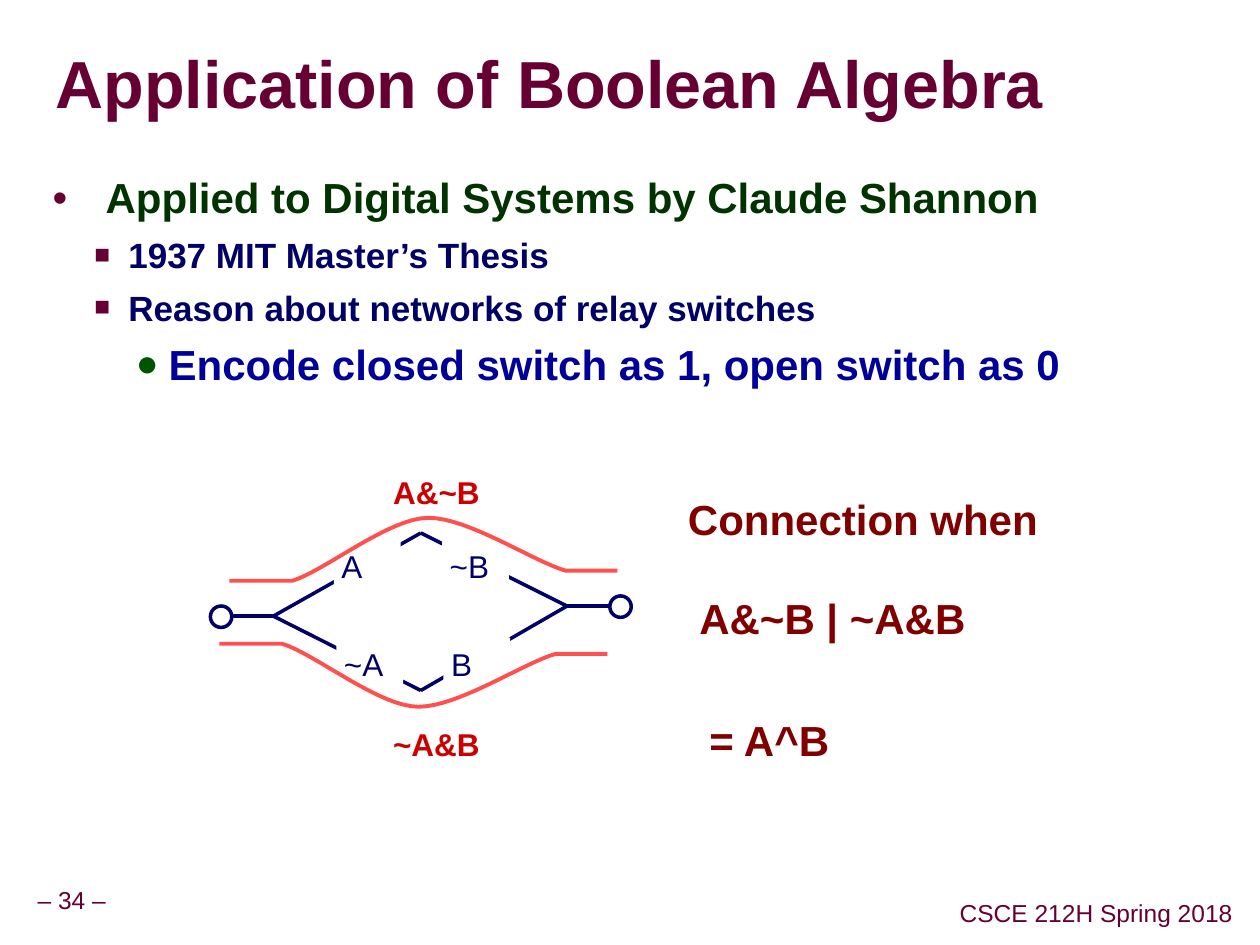
from typing import NamedTuple, Optional

from lxml.etree import SubElement
from pptx import Presentation
from pptx.dml.color import RGBColor
from pptx.enum.shapes import MSO_CONNECTOR as Connector, MSO_SHAPE as Preset
from pptx.enum.text import MSO_ANCHOR as Anchor, PP_ALIGN as Align
from pptx.oxml import parse_xml
from pptx.oxml.ns import nsdecls, qn
from pptx.util import Inches, Pt

# Square grid: 100 columns by 75 rows
COLUMNS, ROWS = 100, 75
WIDTH, HEIGHT = Inches(10), Inches(7.5)

FONT = "Arial"
PLUM = RGBColor(0x66, 0x00, 0x33)
FOREST = RGBColor(0x00, 0x33, 0x00)
LEAF = RGBColor(0x00, 0x54, 0x00)
NAVY = RGBColor(0x00, 0x00, 0x66)
BLUE = RGBColor(0x00, 0x00, 0x99)
MAROON = RGBColor(0x80, 0x00, 0x00)
RED = RGBColor(0xCC, 0x00, 0x00)
CORAL = RGBColor(0xFF, 0x50, 0x50)
WHITE = RGBColor(0xFF, 0xFF, 0xFF)


class Box(NamedTuple):
    left: float
    top: float
    width: float
    height: float


class Bullet(NamedTuple):
    mark: str
    color: RGBColor
    percent: int
    margin: float  # inches
    hang: float  # inches


class Line(NamedTuple):
    text: str
    size: float
    color: RGBColor
    bold: bool = True
    spacing: float = 1.0
    before: float = 0
    align: Align = Align.LEFT
    indent: float = 0  # inches
    bullet: Optional[Bullet] = None


def col(columns: float) -> int:
    return round(WIDTH * columns / COLUMNS)


def row(rows: float) -> int:
    return round(HEIGHT * rows / ROWS)


def place(box: Box) -> tuple:
    return col(box.left), row(box.top), col(box.width), row(box.height)


def set_bullet(paragraph, bullet: Bullet) -> None:
    props = paragraph._p.get_or_add_pPr()
    props.set("marL", str(Inches(bullet.margin)))
    props.set("indent", str(-Inches(bullet.hang)))
    SubElement(SubElement(props, qn("a:buClr")), qn("a:srgbClr")).set("val", str(bullet.color))
    SubElement(props, qn("a:buSzPct")).set("val", str(bullet.percent * 1000))
    SubElement(props, qn("a:buFont")).set("typeface", FONT)
    SubElement(props, qn("a:buChar")).set("char", bullet.mark)


def write(frame, lines: list, insets: tuple, anchor=Anchor.TOP, wrap: bool = True) -> None:
    frame.word_wrap = wrap
    frame.vertical_anchor = anchor
    (frame.margin_left, frame.margin_top,
     frame.margin_right, frame.margin_bottom) = map(Inches, insets)
    for index, line in enumerate(lines):
        paragraph = frame.add_paragraph() if index else frame.paragraphs[0]
        if line.bullet:
            set_bullet(paragraph, line.bullet)
        elif line.indent:
            paragraph._p.get_or_add_pPr().set("marL", str(Inches(line.indent)))
        paragraph.alignment = line.align
        paragraph.line_spacing = line.spacing
        if line.before:
            paragraph.space_before = Pt(line.before)
        run = paragraph.add_run()
        run.text = line.text
        run.font.name, run.font.size, run.font.bold = FONT, Pt(line.size), line.bold
        run.font.color.rgb = line.color


def add_text(slide, box: Box, lines: list, insets: tuple, anchor=Anchor.TOP, wrap: bool = True):
    frame = slide.shapes.add_textbox(*place(box)).text_frame
    write(frame, lines, insets, anchor, wrap)
    return frame


def add_text_shadow(run) -> None:
    shadow = parse_xml(
        f'<a:effectLst {nsdecls("a")}><a:outerShdw dist="53882" dir="2700000">'
        '<a:srgbClr val="969696"/></a:outerShdw></a:effectLst>')
    run.font._element.find(qn("a:solidFill")).addnext(shadow)


def add_wire(slide, start: tuple, end: tuple) -> None:
    wire = slide.shapes.add_connector(
        Connector.STRAIGHT, col(start[0]), row(start[1]), col(end[0]), row(end[1]))
    wire.line.color.rgb, wire.line.width = NAVY, Pt(2)
    SubElement(wire._element.spPr, qn("a:effectLst"))


def add_white_shape(slide, preset, box: Box):
    shape = slide.shapes.add_shape(preset, *place(box))
    shape.shadow.inherit = False
    shape.fill.solid()
    shape.fill.fore_color.rgb = WHITE
    return shape


def bezier(points: list, steps: int = 16) -> list:
    def blend(values: tuple, t: float) -> float:
        a, b, c, d = values
        u = 1 - t
        return a * u**3 + 3 * b * u * u * t + 3 * c * u * t * t + d * t**3

    xs, ys = zip(*points)
    return [(blend(xs, i / steps), blend(ys, i / steps)) for i in range(1, steps + 1)]


def add_current_path(slide, points: list) -> None:
    start, *rest = [(col(x), row(y)) for x, y in points]
    builder = slide.shapes.build_freeform(*start)
    builder.add_line_segments(rest, close=False)
    curve = builder.convert_to_shape()
    curve.shadow.inherit = False
    curve.fill.background()
    curve.line.color.rgb, curve.line.width = CORAL, Pt(2.25)


def main() -> None:
    deck = Presentation()
    deck.slide_width, deck.slide_height = WIDTH, HEIGHT
    slide = deck.slides.add_slide(deck.slide_layouts[6])

    # Footer
    for text, box in (("– 34 –", Box(2.4, 70, 6.6, 3.1)),
                      ("CSCE 212H Spring 2018", Box(75.6, 71, 22.8, 3.1))):
        footer = Line(text, 14, PLUM, bold=False, spacing=0.9, align=Align.CENTER)
        add_text(slide, box, [footer], (0.05,) * 4, Anchor.MIDDLE, wrap=False)

    # Title
    title = add_text(slide, Box(4.4, 2.7, 95.3, 8.5),
                     [Line("Application of Boolean Algebra", 38, PLUM, spacing=0.87)],
                     (0, 0, 0, 0), Anchor.MIDDLE)
    add_text_shadow(title.paragraphs[0].runs[0])

    # Bulleted outline
    dot = Bullet("•", PLUM, 100, 0.42, 0.42)
    square = Bullet("■", PLUM, 75, 0.6, 0.27)
    disc = Bullet("●", LEAF, 90, 0.92, 0.26)
    add_text(slide, Box(3.2, 13.4, 90.9, 57.1), [
        Line("Applied to Digital Systems by Claude Shannon", 24, FOREST, spacing=0.95, bullet=dot),
        Line("1937 MIT Master’s Thesis", 20, NAVY, before=6, bullet=square),
        Line("Reason about networks of relay switches", 20, NAVY, before=6, bullet=square),
        Line("Encode closed switch as 1, open switch as 0", 24, BLUE, spacing=1.07,
             before=4, bullet=disc),
    ], (0.1, 0.05, 0.1, 0.05))

    # Relay network: diamond of wires, then switches laid over them
    west, north, east, south = (21.7, 48.9), (33.4, 42.3), (45, 48.1), (33.4, 54.8)
    for start, end in ((west, north), (west, south), (north, east), (south, east)):
        add_wire(slide, start, end)
    for name, left, top in (("A", 26.5, 42.8), ("~A", 26.7, 50.6),
                            ("~B", 35.1, 42.8), ("B", 35.2, 50.6)):
        switch = add_white_shape(slide, Preset.RECTANGLE, Box(left, top, 5.3, 4.2))
        switch.line.fill.background()
        write(switch.text_frame, [Line(name, 18, NAVY, bold=False)], (0.06, 0.06, 0.1, 0.06))

    # Terminals
    add_wire(slide, east, (48.4, 48.1))
    add_wire(slide, (18.4, 48.9), west)
    for left, top in ((16.7, 48.1), (48.4, 47.3)):
        terminal = add_white_shape(slide, Preset.OVAL, Box(left, top, 1.7, 1.7))
        terminal.line.color.rgb, terminal.line.width = NAVY, Pt(2)

    # Current paths: the lower one mirrors the upper one
    crest = (34, 41.1)
    upper = [(18.2, 46.1), (23.2, 46.1),
             *bezier([(23.2, 46.1), (25.8, 45.3), (30.9, 41.1), crest]),
             *bezier([crest, (37.2, 41.1), (42.4, 44.6), (44.9, 45.3)]),
             (49, 45.3)]
    lower = [(x - 0.8, 97.2 - y) for x, y in upper]
    for path_points, label, top in ((upper, "A&~B", 36.9), (lower, "~A&B", 56.9)):
        add_current_path(slide, path_points)
        add_text(slide, Box(30.6, top, 8.1, 4.2), [Line(label, 18, RED)],
                 (0.06, 0.06, 0.05, 0.06), wrap=False)

    # Resulting expression
    add_text(slide, Box(54, 38.6, 29.5, 21.2), [
        Line("Connection when", 24, MAROON),
        Line("A&~B | ~A&B", 24, MAROON, before=27.6, indent=0.09),
    ], (0.06, 0.06, 0.1, 0.06), wrap=False)
    add_text(slide, Box(55.7, 56.1, 10.8, 5.1), [Line("= A^B", 24, MAROON)],
             (0.06, 0.06, 0.05, 0.06), wrap=False)

    deck.save("out.pptx")


if __name__ == "__main__":
    main()
